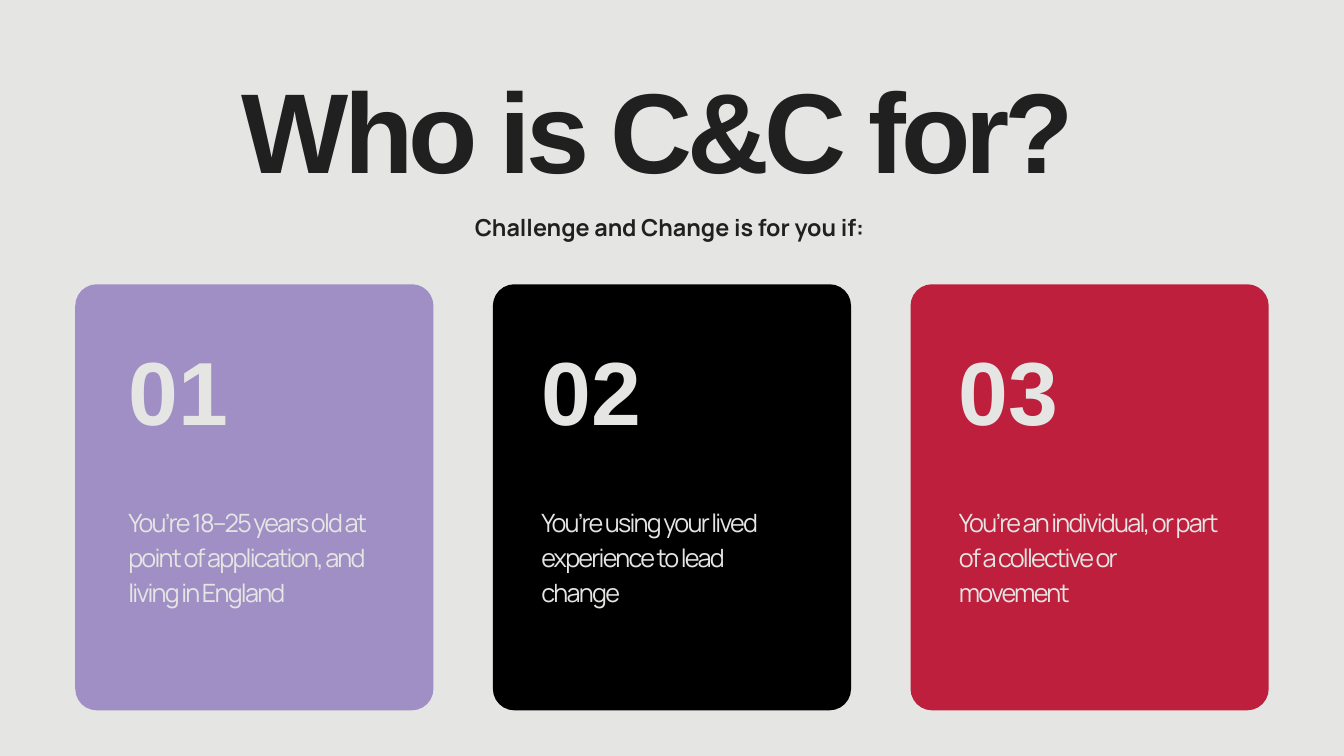
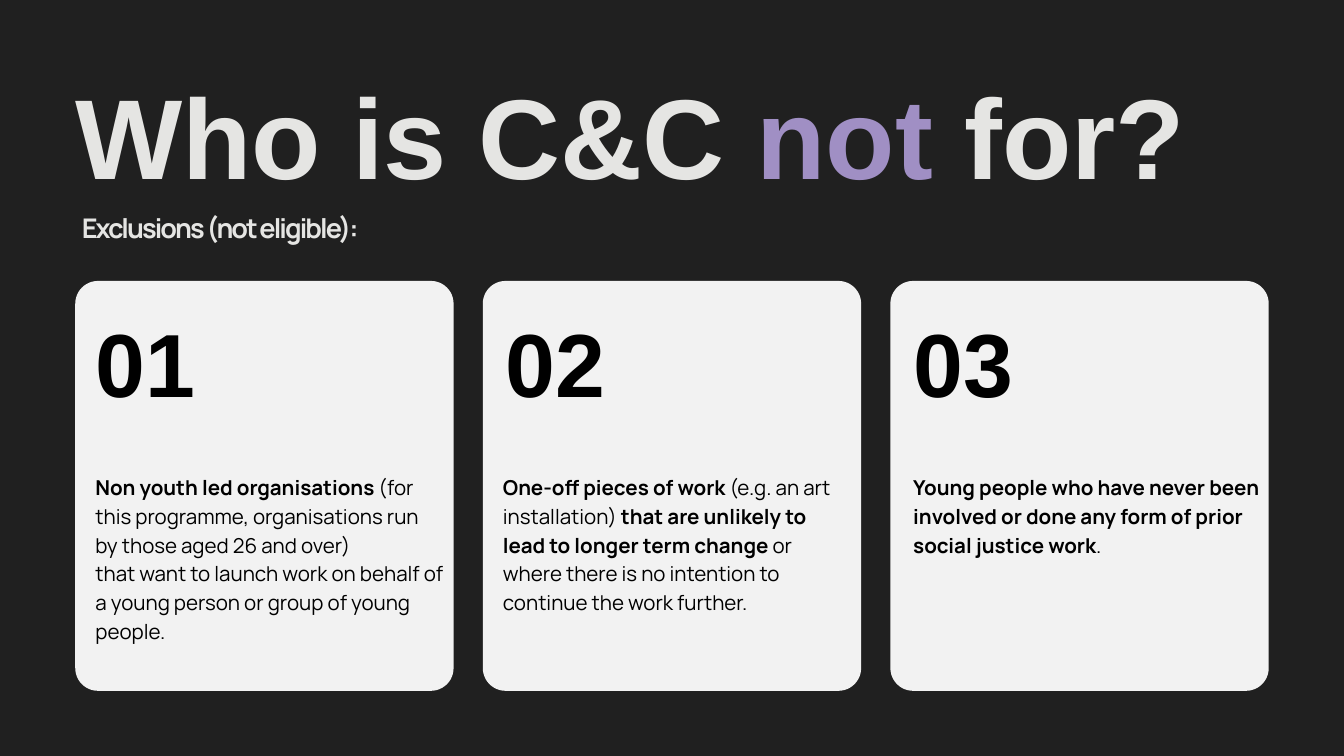
from pptx import Presentation
from pptx.dml.color import RGBColor
from pptx.enum.shapes import MSO_SHAPE
from pptx.enum.text import MSO_ANCHOR, MSO_AUTO_SIZE, PP_ALIGN
from pptx.util import Inches, Pt

LIGHT, DARK, BLACK = "E5E5E3", "202020", "000000"
LILAC, RED, PANEL = "A08FC4", "BD1F3D", "F2F2F2"
HEADING_FONT, BODY_FONT = "Arial", "Manrope"
TITLE_SIZE, NUMBER_SIZE = 121.7, 96
MARGIN = 5.6
CARD_COUNT = 3
TITLE_ONLY = 5


def color(value):
    return RGBColor.from_string(value)


class Deck:
    def __init__(self):
        self.presentation = Presentation()
        self.presentation.slide_width = Inches(20)
        self.presentation.slide_height = Inches(11.25)
        self.slide = None
        self.ink = None

    def add_slide(self, background, ink):
        layout = self.presentation.slide_layouts[TITLE_ONLY]
        self.slide = self.presentation.slides.add_slide(layout)
        self.slide.background.fill.solid()
        self.slide.background.fill.fore_color.rgb = color(background)
        self.ink = ink

    def area(self, left, top, width, height):
        across = self.presentation.slide_width / 100
        down = self.presentation.slide_height / 100
        return [int(left * across), int(top * down), int(width * across), int(height * down)]

    def set_text(self, shape, paragraphs, font, size, leading, align=PP_ALIGN.LEFT, tracking=0):
        frame = shape.text_frame
        frame.word_wrap = True
        frame.auto_size = MSO_AUTO_SIZE.NONE
        frame.vertical_anchor = MSO_ANCHOR.TOP
        frame.margin_left = frame.margin_top = frame.margin_right = frame.margin_bottom = 0
        for index, runs in enumerate(paragraphs):
            paragraph = frame.add_paragraph() if index else frame.paragraphs[0]
            paragraph.alignment = align
            paragraph.line_spacing = Pt(leading)
            paragraph.space_before = Pt(0)
            for text, bold, *tint in runs:
                run = paragraph.add_run()
                run.text = text
                run.font.name = font
                run.font.size = Pt(size)
                run.font.bold = bold
                run.font.color.rgb = color(tint[0] if tint else self.ink)
                if tracking:
                    run._r.get_or_add_rPr().set("spc", str(round(tracking * 100)))

    def title(self, runs, area, leading, **style):
        shape = self.slide.shapes.title
        shape.left, shape.top, shape.width, shape.height = self.area(*area)
        self.set_text(shape, [runs], HEADING_FONT, TITLE_SIZE, leading, **style)

    def text(self, paragraphs, area, size, leading, font=BODY_FONT, **style):
        shape = self.slide.shapes.add_textbox(*self.area(*area))
        self.set_text(shape, paragraphs, font, size, leading, **style)

    def card(self, area, fill, radius):
        shape = self.slide.shapes.add_shape(MSO_SHAPE.ROUNDED_RECTANGLE, *self.area(*area))
        shape.adjustments[0] = radius
        shape.shadow.inherit = False
        shape.fill.solid()
        shape.fill.fore_color.rgb = color(fill)
        shape.line.fill.background()

    def card_row(self, cards, top, width, height, radius, number_top, text_top, text_area, **style):
        step = (100 - 2 * MARGIN - width) / (CARD_COUNT - 1)
        for index, (fill, number_inset, text_inset, paragraphs) in enumerate(cards):
            left = MARGIN + index * step
            self.card((left, top, width, height), fill, radius)
            self.text([[(f"{index + 1:02}", True)]], (left + number_inset, number_top, 11.55, 16.09),
                      NUMBER_SIZE, 134.4, HEADING_FONT)
            self.text(paragraphs, (left + text_inset, text_top, *text_area), **style)


def eligible_slide(deck):
    deck.add_slide(LIGHT, DARK)
    deck.title([("Who is C&C for? ", True)], (9.55, 11.02, 80.85, 15.64), 120.5,
               align=PP_ALIGN.CENTER, tracking=-5.3)
    deck.text([[("Challenge and Change is for you if: ", True)]], (34.2, 27.56, 31.55, 4.27),
              25, 35, align=PP_ALIGN.CENTER)
    deck.ink = LIGHT
    cards = [
        (LILAC, 3.95, 3.95,
         [[("You’re 18–25 years old at point of application, and living in England", False)]]),
        (BLACK, 3.6, 3.6, [[("You’re using your lived experience to lead change", False)]]),
        (RED, 3.6, 3.6, [[("You’re an individual, or part of a collective or movement", False)]]),
    ]
    deck.card_row(cards, 37.6, 26.65, 56.36, 0.06, 42.04, 66.4, (19.45, 13.96),
                  size=27, leading=37.8, tracking=-1.9)


def excluded_slide(deck):
    deck.add_slide(DARK, LIGHT)
    deck.title([("Who is C&C ", True), ("not", True, LILAC), (" for?", True)],
               (MARGIN, 13.78, 83.45, 14.22), 104.7)
    deck.text([[("Exclusions (not eligible): ", True)]], (MARGIN, 27.2, 21.85, 5.07),
              29, 40.6, align=PP_ALIGN.CENTER, tracking=-2.1)
    deck.ink = BLACK
    cards = [
        (PANEL, 1.5, 1.5, [
            [("Non youth led organisations", True),
             (" (for this programme, organisations run by those aged 26 and over)", False)],
            [("that want to launch work on behalf of a young person or group of young people.", False)],
        ]),
        (PANEL, 1.7, 1.5, [
            [("One-off pieces of work", True),
             (" (e.g. an art installation) ", False),
             ("that are unlikely to lead to longer term change", True),
             (" or where there is no intention to continue the work further.", False)],
        ]),
        (PANEL, 1.7, 1.7, [
            [("Young people who have never been involved or done any form of prior social justice work", True),
             (".", False)],
        ]),
    ]
    deck.card_row(cards, 37.16, 28.15, 54.22, 0.06, 38.31, 62.31, (26, 22.76),
                  size=22, leading=30.8)


def main():
    deck = Deck()
    eligible_slide(deck)
    excluded_slide(deck)
    deck.presentation.save("out.pptx")


if __name__ == "__main__":
    main()
